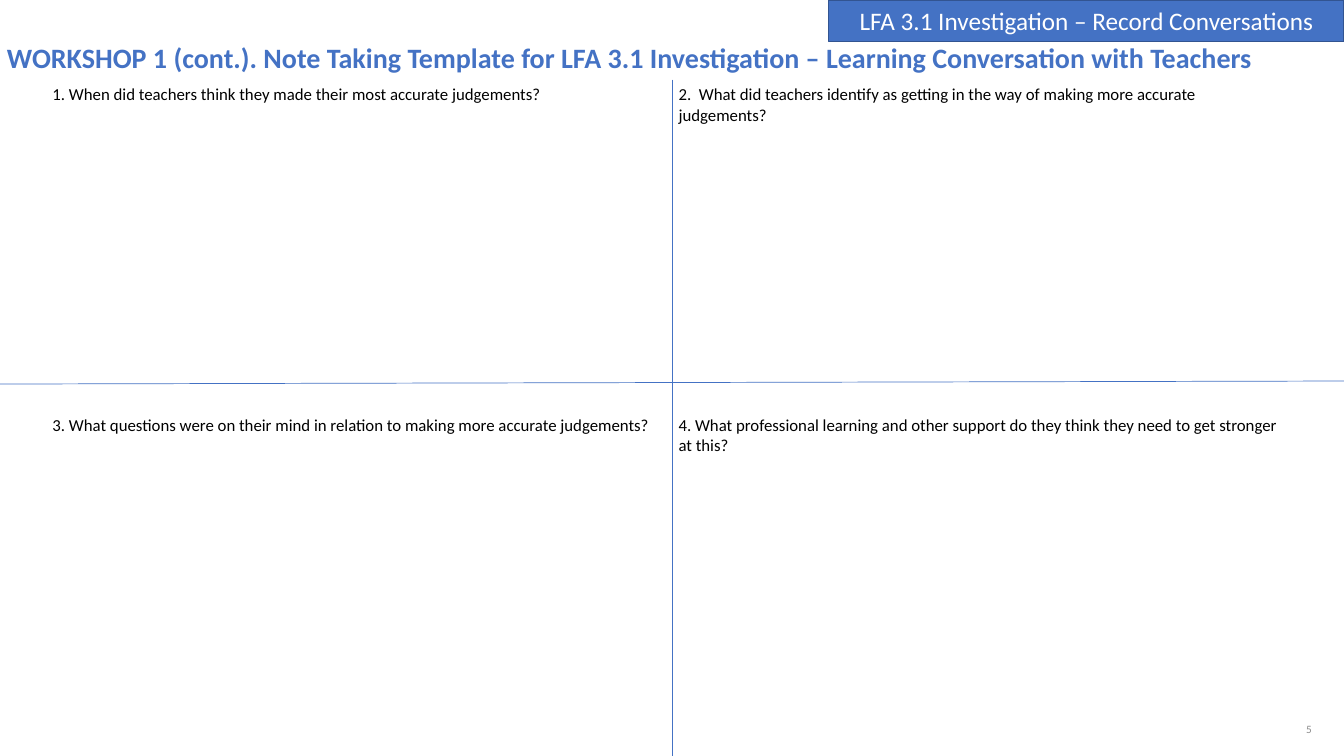
from dataclasses import dataclass

from pptx import Presentation
from pptx.dml.color import RGBColor
from pptx.enum.shapes import MSO_CONNECTOR as Connector, MSO_SHAPE as Shape
from pptx.enum.text import MSO_ANCHOR as Anchor, MSO_AUTO_SIZE as AutoSize, PP_ALIGN as Align
from pptx.oxml import parse_xml
from pptx.oxml.ns import nsdecls
from pptx.util import Inches, Pt

COLORS = {
    "blue": "4472C4",
    "dark_blue": "325491",
    "white": "FFFFFF",
    "black": "000000",
    "grey": "8C8C8C",
}
FONT = "Calibri"
SLIDE_WIDTH, SLIDE_HEIGHT = 13.33, 7.5
GRID_LEFT, GRID_TOP, GRID_WIDTH, GRID_HEIGHT = 0.42, 0.79, 12.42, 6.56


@dataclass
class TextStyle:
    size: float
    color: str
    align: Align = Align.LEFT
    anchor: Anchor = Anchor.TOP
    bold: bool = False


@dataclass
class Divider:
    start: tuple[float, float]
    end: tuple[float, float]


TITLE_STYLE = TextStyle(20, "blue", Align.CENTER, bold=True)
BANNER_STYLE = TextStyle(18, "white", Align.CENTER, Anchor.MIDDLE)
QUESTION_STYLE = TextStyle(12, "black")
NUMBER_STYLE = TextStyle(8, "grey", Align.RIGHT, Anchor.MIDDLE)

QUESTIONS = [
    ["1. When did teachers think they made their most accurate judgements?",
     "2.  What did teachers identify as getting in the way of making more accurate judgements?"],
    ["3. What questions were on their mind in relation to making more accurate judgements?",
     "4. What professional learning and other support do they think they need to get stronger at this?"],
]
DIVIDERS = [
    Divider((SLIDE_WIDTH / 2, GRID_TOP), (SLIDE_WIDTH / 2, SLIDE_HEIGHT)),
    Divider((0, 3.81), (SLIDE_WIDTH, 3.78)),
]


def color(name: str) -> RGBColor:
    return RGBColor.from_string(COLORS[name])


def write(frame, text: str, style: TextStyle) -> None:
    frame.word_wrap = True
    para = frame.paragraphs[0]
    para.alignment = style.align
    span = para.add_run()
    span.text = text
    span.font.name = FONT
    span.font.size = Pt(style.size)
    span.font.bold = style.bold
    span.font.color.rgb = color(style.color)


def write_box(box, text: str, style: TextStyle) -> None:
    box.text_frame.vertical_anchor = style.anchor
    box.text_frame.auto_size = AutoSize.NONE
    write(box.text_frame, text, style)


def add_questions(page) -> None:
    rows, columns = len(QUESTIONS), len(QUESTIONS[0])
    table = page.shapes.add_table(
        rows, columns, Inches(GRID_LEFT), Inches(GRID_TOP),
        Inches(GRID_WIDTH), Inches(GRID_HEIGHT)).table
    table.horz_banding = False
    for row, questions in enumerate(QUESTIONS):
        for column, question in enumerate(questions):
            cell = table.cell(row, column)
            cell.fill.background()
            write(cell.text_frame, question, QUESTION_STYLE)


def add_divider(page, divider: Divider) -> None:
    line = page.shapes.add_connector(
        Connector.STRAIGHT, *map(Inches, divider.start + divider.end))
    line.line.color.rgb = color("blue")
    line.line.width = Pt(0.5)
    line._element.spPr.append(parse_xml(f"<a:effectLst {nsdecls('a')}/>"))


def add_banner(page) -> None:
    banner = page.shapes.add_shape(
        Shape.RECTANGLE, Inches(8.22), Inches(0), Inches(5.11), Inches(0.41))
    banner.shadow.inherit = False
    banner.fill.solid()
    banner.fill.fore_color.rgb = color("blue")
    banner.line.color.rgb = color("dark_blue")
    banner.line.width = Pt(1)
    write_box(banner, "LFA 3.1 Investigation – Record Conversations", BANNER_STYLE)


def main() -> None:
    deck = Presentation()
    deck.slide_width, deck.slide_height = Inches(SLIDE_WIDTH), Inches(SLIDE_HEIGHT)
    page = deck.slides.add_slide(deck.slide_layouts[5])

    # Title
    title = page.shapes.title
    title.left, title.top = Inches(-0.42), Inches(0.35)
    title.width, title.height = Inches(SLIDE_WIDTH), Inches(0.44)
    write_box(
        title,
        "WORKSHOP 1 (cont.). Note Taking Template for LFA 3.1 Investigation"
        " – Learning Conversation with Teachers",
        TITLE_STYLE)

    # Page number
    number = page.shapes.add_textbox(Inches(10.11), Inches(7.03), Inches(3), Inches(0.4))
    write_box(number, "5", NUMBER_STYLE)

    # Question grid and its dividing lines
    add_questions(page)
    for divider in DIVIDERS:
        add_divider(page, divider)

    # Corner banner
    add_banner(page)

    deck.save("out.pptx")


if __name__ == "__main__":
    main()
